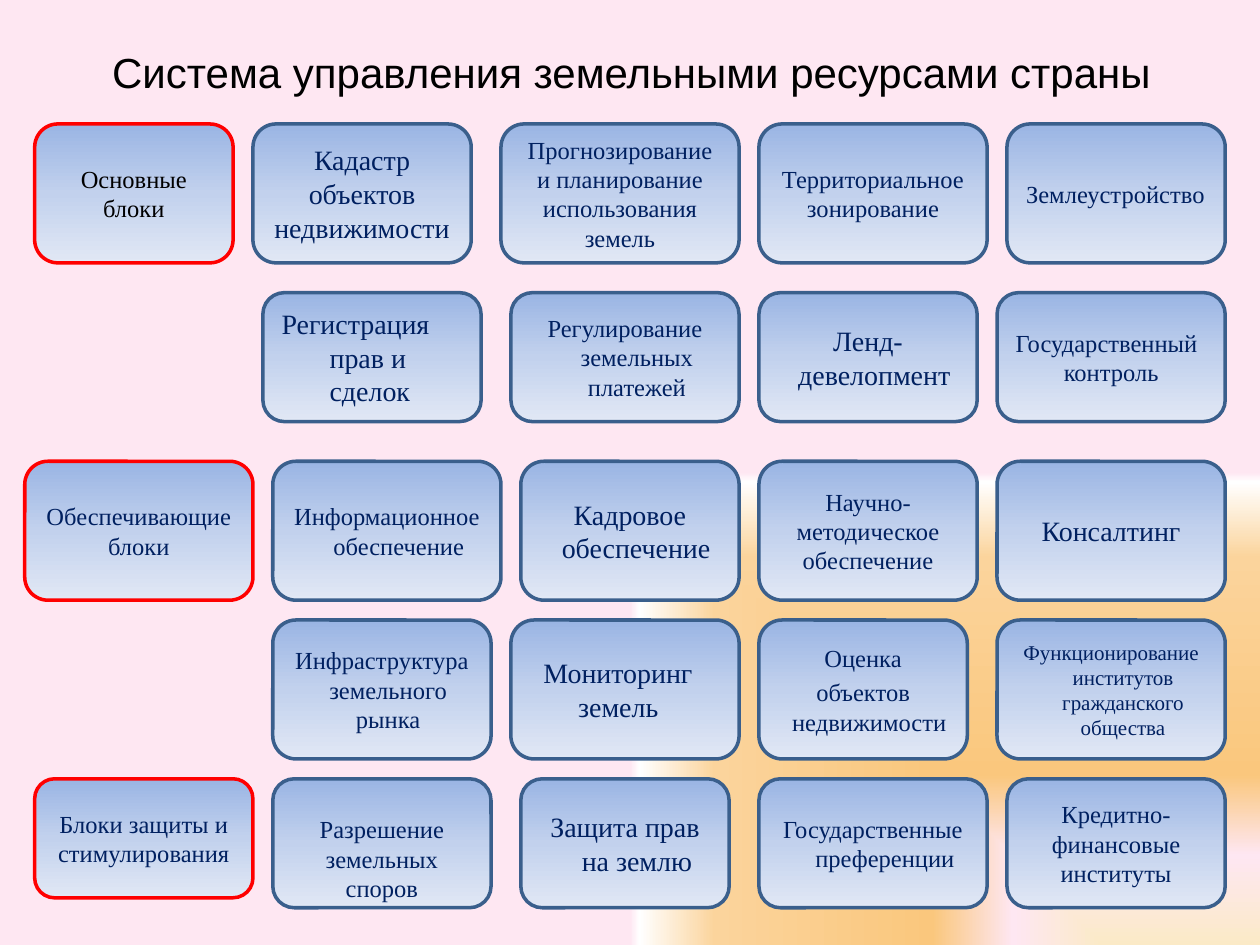
"""Build the slide on the national land resource management system."""
import pptx
import pptx.dml.color
import pptx.enum.shapes
import pptx.enum.text
import pptx.oxml
import pptx.oxml.ns
import pptx.util

Cm, Pt = pptx.util.Cm, pptx.util.Pt
ALIGN = pptx.enum.text.PP_ALIGN
COLORS = {
    "title": "000000", "text": "002060", "border": "3A5F8C", "heading": "FF0000",
    "top": "9AB5E4", "middle": "C2D1ED", "bottom": "E1E8F5",
    "cream": "FBEAC7", "pink": "FEE7F2", "orange": "FAC77D", "peach": "FBD49C",
    "white": "FFFFFF",
}
BLOCK_STOPS = [(0, "top", 100), (50, "middle", 100), (100, "bottom", 100)]
BACKGROUND_STOPS = [(0, "cream", 100), (19, "pink", 100), (36, "orange", 100),
                    (82, "peach", 100), (98, "white", 0), (100, "pink", 100)]
LINEAR = '<a:lin ang="5400000" scaled="0"/>'
FROM_CORNER = '<a:path path="rect"><a:fillToRect l="100000" t="100000"/></a:path>'
WIDE, MEDIUM, NARROW = 0.97, 0.48, 0.25

ROWS = [
    (2.5, 2.8, [
        (0.7, 4.0, "Основные блоки", 14, {"border": "heading", "color": "title"}),
        (5.1, 4.4, "Кадастр объектов недвижимости", 16, {}),
        (10.1, 4.8, "Прогнозирование и планирование использования земель", 14, {}),
        (15.3, 4.6, "Территориальное зонирование", 14, {}),
        (20.3, 4.4, "Землеустройство", 14, {"hang": WIDE, "align": ALIGN.LEFT}),
    ]),
    (5.9, 2.6, [
        (5.3, 4.4, "Регистрация прав и сделок", 16, {"hang": WIDE, "align": ALIGN.LEFT}),
        (10.3, 4.6, "Регулирование земельных платежей", 14, {"hang": MEDIUM}),
        (15.3, 4.4, "Ленд-девелопмент", 16, {"hang": NARROW}),
        (20.1, 4.6, "Государственный контроль", 14, {"hang": WIDE, "align": ALIGN.LEFT}),
    ]),
    (9.3, 2.8, [
        (0.5, 4.6, "Обеспечивающие блоки", 14, {"border": "heading"}),
        (5.5, 4.6, "Информационное обеспечение", 14, {"hang": MEDIUM}),
        (10.5, 4.4, "Кадровое обеспечение", 16, {"hang": NARROW}),
        (15.3, 4.4, "Научно-методическое обеспечение", 14, {}),
        (20.1, 4.6, "Консалтинг", 16, {"hang": WIDE}),
    ]),
    (12.5, 2.8, [
        (5.5, 4.4, "Инфраструктура земельного рынка", 14, {"hang": NARROW}),
        (10.3, 4.6, "Мониторинг земель", 16,
         {"hang": WIDE, "first": -0.7, "align": ALIGN.LEFT}),
        (15.3, 4.2, "Оценка\nобъектов недвижимости", 14, {"hang": NARROW}),
        (20.1, 4.6, "Функционирование институтов гражданского общества", 12,
         {"hang": MEDIUM}),
    ]),
    (15.7, 2.6, [
        (0.7, 4.4, "Блоки защиты и стимулирования", 14,
         {"border": "heading", "height": 2.4}),
        (5.5, 4.4, "Разрешение земельных\nспоров", 14, {"insets": (0.61, 0), "gap": 0}),
        (10.5, 4.2, "Защита прав на землю", 16, {"hang": MEDIUM}),
        (15.3, 4.6, "Государственные преференции", 14, {"hang": MEDIUM}),
        (20.3, 4.4, "Кредитно-финансовые институты", 14, {}),
    ]),
]


class SlideBuilder:
    """Hold the style and the current slide."""

    title_font = "Arial"
    block_font = "Times New Roman"

    def __init__(self, slide):
        self.slide = slide

    def color(self, name):
        """Return the named colour."""
        return pptx.dml.color.RGBColor.from_string(COLORS[name])

    def gradient(self, owner, fill, stops, direction):
        """Fill the owner with a gradient of several stops."""
        fill.gradient()
        stop_xml = "".join(
            f'<a:gs pos="{position * 1000}"><a:srgbClr val="{COLORS[name]}">'
            f'<a:alpha val="{alpha * 1000}"/></a:srgbClr></a:gs>'
            for position, name, alpha in stops)
        gradient = pptx.oxml.parse_xml(
            f'<a:gradFill {pptx.oxml.ns.nsdecls("a")} rotWithShape="1">'
            f'<a:gsLst>{stop_xml}</a:gsLst>{direction}</a:gradFill>')
        default = owner._element.find(".//" + pptx.oxml.ns.qn("a:gradFill"))
        default.getparent().replace(default, gradient)

    def background(self):
        """Paint the slide background."""
        self.gradient(self.slide, self.slide.background.fill, BACKGROUND_STOPS, FROM_CORNER)

    def title(self, text):
        """Place the slide title."""
        title = self.slide.shapes.title
        title.left, title.top, title.width, title.height = Cm(1.3), Cm(0.74), Cm(22.86), Cm(1.4)
        title.text_frame.text = text
        title.text_frame.vertical_anchor = pptx.enum.text.MSO_ANCHOR.MIDDLE
        self.paragraph(title.text_frame.paragraphs[0], self.title_font, 24, "title", ALIGN.CENTER)

    def paragraph(self, paragraph, font, size, color, align):
        """Format one paragraph."""
        paragraph.alignment = align
        paragraph.font.name = font
        paragraph.font.size = Pt(size)
        paragraph.font.color.rgb = self.color(color)

    def block(self, left, top, width, height, text, size, border="border", color="text",
              align=ALIGN.CENTER, hang=0, first=None, insets=(0.13, 0.13), gap=3):
        """Add one rounded block with its caption."""
        block = self.slide.shapes.add_shape(
            pptx.enum.shapes.MSO_SHAPE.ROUNDED_RECTANGLE,
            Cm(left), Cm(top), Cm(width), Cm(height))
        block.shadow.inherit = False
        self.gradient(block, block.fill, BLOCK_STOPS, LINEAR)
        block.line.color.rgb = self.color(border)
        block.line.width = Pt(2)
        frame = block.text_frame
        frame.text = text
        frame.word_wrap = True
        frame.vertical_anchor = pptx.enum.text.MSO_ANCHOR.MIDDLE
        frame.margin_top, frame.margin_bottom = map(Cm, insets)
        for index, caption in enumerate(frame.paragraphs):
            self.paragraph(caption, self.block_font, size, color, align)
            caption.space_before = Pt(gap if index else 0)
            properties = caption._p.get_or_add_pPr()
            properties.set("marL", str(Cm(hang)))
            properties.set("indent", str(Cm(-hang if first is None else first)))


def main():
    """Build and save the presentation."""
    presentation = pptx.Presentation()
    presentation.slide_width, presentation.slide_height = Cm(25.4), Cm(19.05)
    builder = SlideBuilder(presentation.slides.add_slide(presentation.slide_layouts[5]))
    builder.background()
    builder.title("Система управления земельными ресурсами страны")
    for top, row_height, blocks in ROWS:
        for left, width, text, size, style in blocks:
            builder.block(left, top, width, text=text, size=size,
                          **{"height": row_height, **style})
    presentation.save("out.pptx")


if __name__ == "__main__":
    main()
